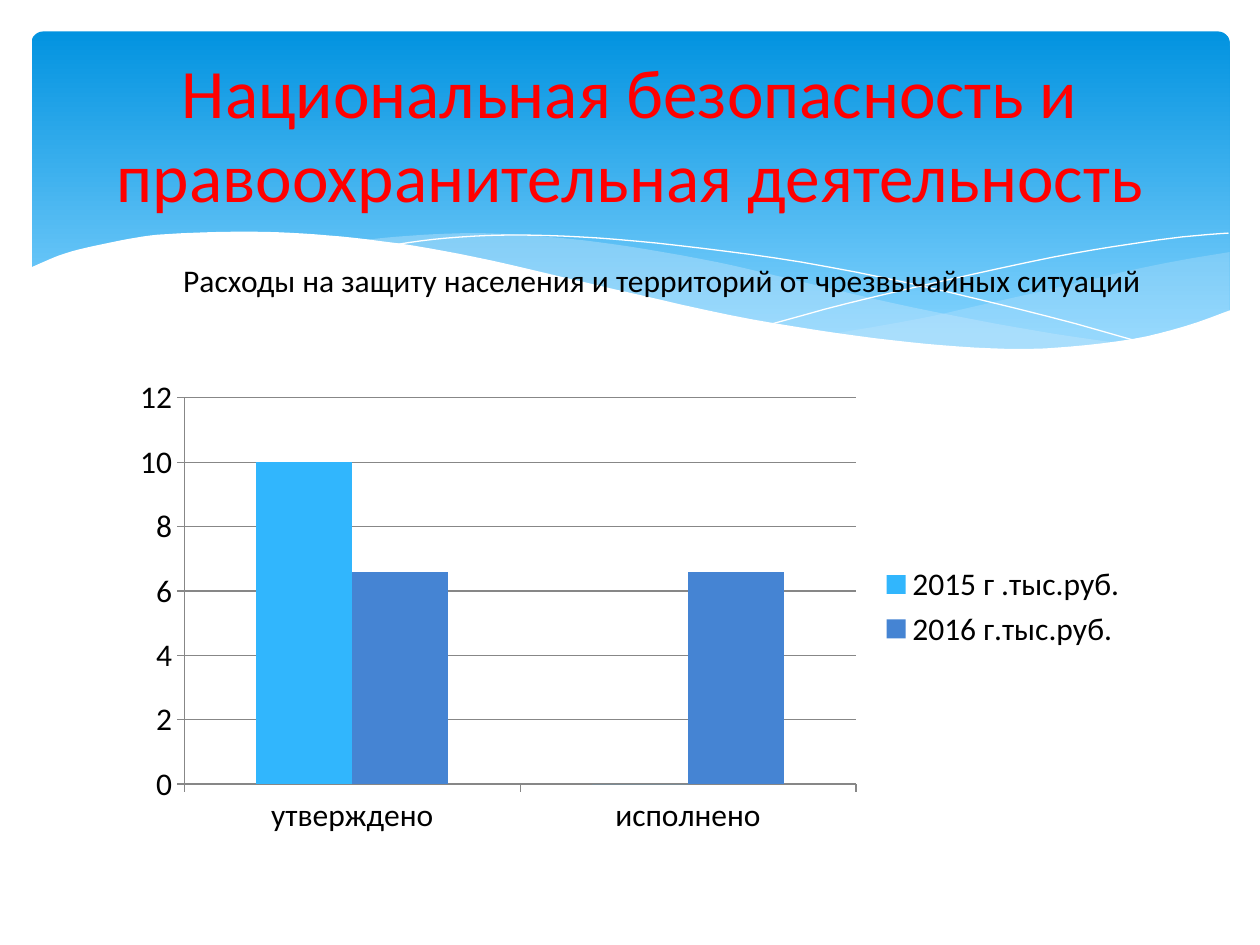
from dataclasses import dataclass
from typing import Optional

from lxml import etree
from pptx import Presentation
from pptx.chart import data
from pptx.dml import color
from pptx.enum import chart as ec, shapes, text
from pptx.oxml import ns
from pptx.util import Pt

FONT = "Calibri"
GREY = "878787"
Curve = list[tuple[float, float]]


@dataclass
class Wave:
    curves: list[Curve]
    fill: Optional[str] = None
    alpha: int = 100


BASE = [(16.6, 236.9), (703.4, 236.9)]
WAVES = [
    Wave([[(702.7, 144), (673.2, 149), (641.5, 155.5), (599, 165.6),
           (560.9, 174.2), (524.9, 182.2), (475.9, 190.8)],
          [(475.9, 190.8), (507.6, 195.1), (545, 198.7), (578.2, 200.2),
           (614.9, 198.7), (645.8, 194.4), (673.2, 188.6), (702.7, 177.8)]],
         "C6E7FC", 29),
    Wave([[(205.9, 137.5), (246.2, 143.3), (290.9, 151.9), (323.3, 159.8),
           (381.6, 172.8), (432.7, 183.6), (478.8, 191.5), (519.8, 197.3),
           (556.6, 199.4), (589, 200.2), (617, 199.4), (643, 196.6)],
          [(643, 196.6), (602.6, 190.8), (558, 182.9), (508.3, 172.8),
           (452.9, 159.8), (409.7, 149.8), (370.1, 142.6), (334.8, 137.5),
           (302.4, 134.6), (273.6, 133.2), (247.7, 133.9), (225.4, 135.4),
           (205.9, 137.5)]],
         "C6E7FC", 40),
    Wave([[(222.5, 140.4), (247.7, 136.8), (278.6, 134.6), (311.8, 134.6),
           (352.1, 136.8), (400.3, 141.8), (457.9, 149.8), (523.4, 162.7),
           (598.3, 180.7), (653, 195.8)]]),
    Wave([[(441.4, 185), (483.8, 173.5), (538.6, 160.6), (601.9, 146.9),
           (644.4, 139.7), (675.4, 135.4), (702, 133.2)]]),
    Wave([[(703.4, 177.1), (676.8, 186.5), (647.3, 193.7), (612, 198),
           (582.5, 199.4), (547.9, 198), (509.8, 194.4), (466.6, 188.6),
           (416.9, 180), (362.2, 167.8), (321.8, 158.4), (281.5, 149),
           (244.8, 141.8), (210.2, 136.8), (180, 133.9), (151.9, 132.5),
           (127.4, 132.5), (105.1, 133.2), (85.7, 134.6), (68.4, 137.5),
           (48.2, 141.8), (33.1, 146.2), (16.6, 153.4)], BASE],
         "FFFFFF"),
]


def paint(target, code: str) -> None:
    target.rgb = color.RGBColor.from_string(code)


def solid(fill, code: str) -> None:
    fill.solid()
    paint(fill.fore_color, code)


def style(font, size: float, code: str) -> None:
    font.name = FONT
    font.size = Pt(size)
    paint(font.color, code)


def place(item, left: float, top: float, width: float, height: float) -> None:
    item.left, item.top = Pt(left), Pt(top)
    item.width, item.height = Pt(width), Pt(height)


def smooth(pts: Curve, steps: int = 4) -> Curve:
    if len(pts) < 3:
        return pts
    ends = [pts[0], *pts, pts[-1]]
    out = []
    for a, b, c, d in zip(ends, ends[1:], ends[2:], ends[3:]):
        for n in range(steps):
            t = n / steps
            out.append(tuple(
                q + t * (r - p) / 2 + t * t * (2 * p - 5 * q + 4 * r - s) / 2
                + t ** 3 * (3 * q - p - 3 * r + s) / 2
                for p, q, r, s in zip(a, b, c, d)))
    return out + [pts[-1]]


def draw_wave(slide, wave: Wave) -> None:
    pts = [(x * 10, y * 10) for part in wave.curves for x, y in smooth(part)]
    pen = slide.shapes.build_freeform(*pts[0], scale=Pt(0.1))
    pen.add_line_segments(pts[1:], close=wave.fill is not None)
    item = pen.convert_to_shape()
    item.shadow.inherit = False
    if wave.fill is None:
        item.fill.background()
        solid(item.line.fill, "FFFFFF")
        item.line.width = Pt(0)
        return
    item.line.fill.background()
    solid(item.fill, wave.fill)
    if wave.alpha < 100:
        tone = item.fill._xPr.find(".//" + ns.qn("a:srgbClr"))
        etree.SubElement(tone, ns.qn("a:alpha")).set("val", str(wave.alpha * 1000))


def draw_panel(slide) -> None:
    panel = slide.shapes.add_shape(
        shapes.MSO_SHAPE.ROUNDED_RECTANGLE, Pt(18), Pt(18), Pt(684.7), Pt(194.4))
    panel.adjustments[0] = 0.034
    panel.shadow.inherit = False
    panel.line.fill.background()
    panel.fill.gradient()
    panel.fill.gradient_angle = 270
    ramp = [(0, "0293E0"), (0.9, "83D3FE")]
    for stop, (pos, code) in zip(panel.fill.gradient_stops, ramp):
        stop.position = pos
        paint(stop.color, code)


def draw_chart(slide) -> None:
    table = data.CategoryChartData()
    table.categories = ["утверждено", "исполнено"]
    table.add_series("2015 г .тыс.руб.", (10, 0))
    table.add_series("2016 г.тыс.руб.", (6.6, 6.6))
    chart = slide.shapes.add_chart(
        ec.XL_CHART_TYPE.COLUMN_CLUSTERED,
        Pt(68.4), Pt(211), Pt(583.2), Pt(271.4), table).chart
    style(chart.font, 18, "000000")
    chart.has_title = False
    chart.has_legend = True
    chart.legend.position = ec.XL_LEGEND_POSITION.RIGHT
    chart.legend.include_in_layout = False
    plot = chart.plots[0]
    plot.gap_width = 150
    plot.overlap = 0
    plot.vary_by_categories = False
    for row, code in zip(plot.series, ("31B6FD", "4584D3")):
        solid(row.format.fill, code)
    grid = chart.value_axis
    grid.has_major_gridlines = True
    grid.minimum_scale, grid.maximum_scale, grid.major_unit = 0, 12, 2
    for axis in (chart.category_axis, grid):
        axis.major_tick_mark = ec.XL_TICK_MARK.OUTSIDE
        solid(axis.format.line.fill, GREY)
    solid(grid.major_gridlines.format.line.fill, GREY)


def draw_title(slide) -> None:
    title = slide.shapes.title
    slide.shapes.element.append(title.element)
    place(title, 36, 26.6, 648, 98.6)
    frame = title.text_frame
    frame.text = "Национальная безопасность и правоохранительная деятельность"
    frame.word_wrap = True
    frame.auto_size = text.MSO_AUTO_SIZE.NONE
    frame.vertical_anchor = text.MSO_ANCHOR.MIDDLE
    line = frame.paragraphs[0]
    line.alignment = text.PP_ALIGN.CENTER
    style(line.runs[0].font, 39.6, "FF0000")


def draw_note(slide) -> None:
    box = slide.shapes.add_textbox(Pt(93.6), Pt(145.4), Pt(583.2), Pt(29))
    frame = box.text_frame
    frame.text = " Расходы на защиту населения и территорий от чрезвычайных ситуаций"
    frame.word_wrap = False
    frame.auto_size = text.MSO_AUTO_SIZE.SHAPE_TO_FIT_TEXT
    style(frame.paragraphs[0].runs[0].font, 18, "000000")


def main() -> None:
    deck = Presentation()
    deck.slide_width, deck.slide_height = Pt(720), Pt(540)
    slide = deck.slides.add_slide(deck.slide_layouts[5])
    solid(slide.background.fill, "FFFFFF")
    draw_panel(slide)
    for wave in WAVES:
        draw_wave(slide, wave)
    draw_chart(slide)
    draw_title(slide)
    draw_note(slide)
    deck.save("out.pptx")


if __name__ == "__main__":
    main()
